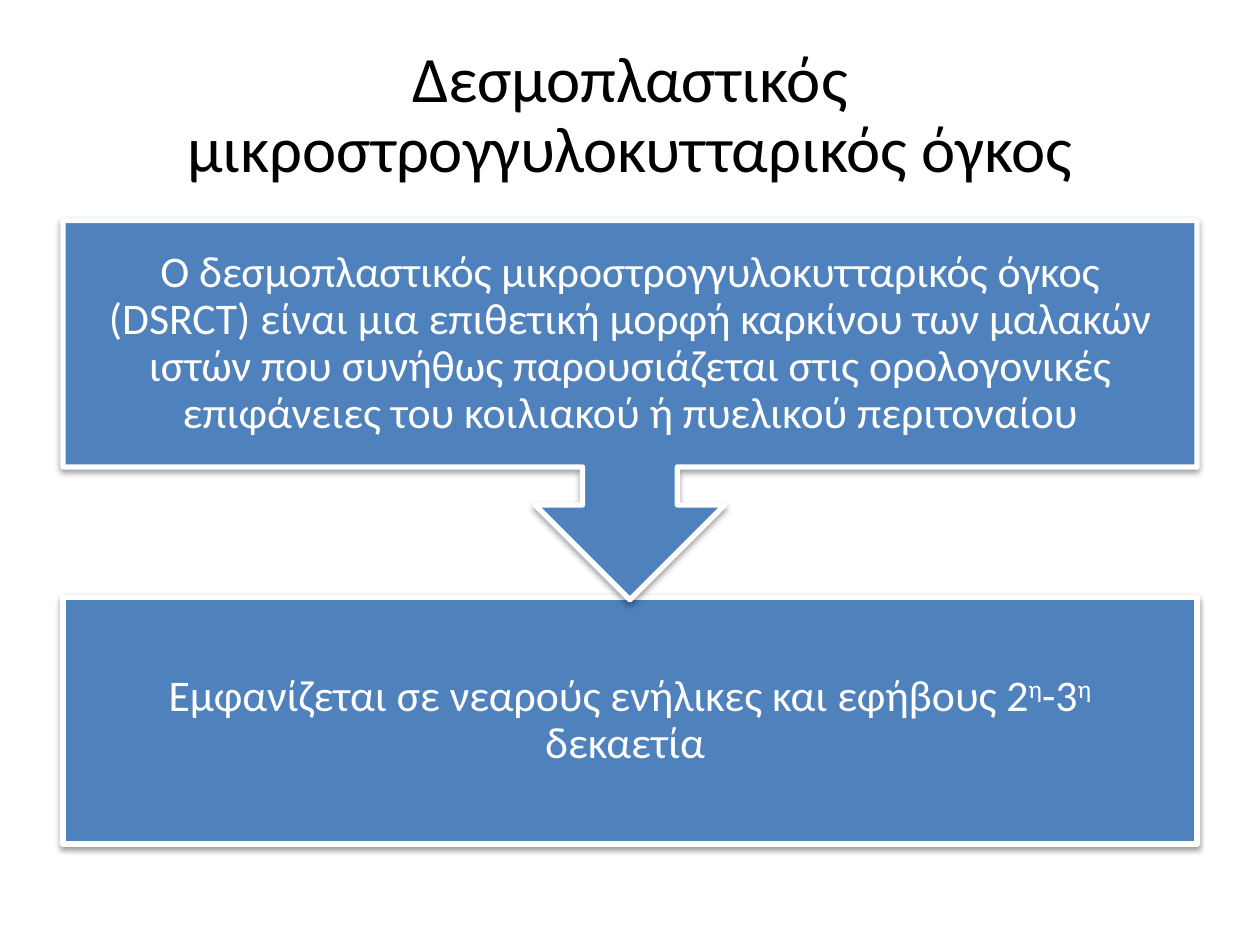
from dataclasses import dataclass

import pptx
import pptx.dml.color
import pptx.enum.shapes
import pptx.enum.text
import pptx.oxml
import pptx.oxml.ns
import pptx.util
from pptx.util import Inches

SHAPES = pptx.enum.shapes.MSO_SHAPE
FONT = "Calibri"
BLUE, WHITE, BLACK = "4F81BD", "FFFFFF", "000000"
LEFT, WIDTH = 0.5, 9


@dataclass
class Step:
    """One stage of the downward process; spans are (text, is superscript)."""
    kind: SHAPES
    top: float
    height: float
    spans: list[tuple[str, bool]]


STEPS = [
    Step(SHAPES.RECTANGLE, 4.74, 1.96, [
        ("Εμφανίζεται σε νεαρούς ενήλικες και εφήβους 2", False),
        ("η", True), ("-3", False), ("η", True), (" δεκαετία ", False),
    ]),
    Step(SHAPES.DOWN_ARROW_CALLOUT, 1.75, 3.01, [
        ("Ο δεσμοπλαστικός μικροστρογγυλοκυτταρικός όγκος (DSRCT) είναι μια "
         "επιθετική μορφή καρκίνου των μαλακών ιστών που συνήθως παρουσιάζεται "
         "στις ορολογονικές επιφάνειες του κοιλιακού ή πυελικού περιτοναίου", False),
    ]),
]


def color(value: str) -> pptx.dml.color.RGBColor:
    return pptx.dml.color.RGBColor.from_string(value)


def format_text(frame, size: float, hue: str) -> None:
    frame.word_wrap = True
    frame.auto_size = pptx.enum.text.MSO_AUTO_SIZE.NONE
    frame.vertical_anchor = pptx.enum.text.MSO_ANCHOR.MIDDLE
    para = frame.paragraphs[0]
    para.alignment = pptx.enum.text.PP_ALIGN.CENTER
    para.line_spacing = 0.9
    para.font.name = FONT
    para.font.size = pptx.util.Pt(size)
    para.font.color.rgb = color(hue)


def add_shadow(box) -> None:
    """Cast a soft black shadow straight down."""
    box.shadow.inherit = False
    effects = box._element.spPr.find(pptx.oxml.ns.qn("a:effectLst"))
    effects.append(pptx.oxml.parse_xml(
        f'<a:outerShdw {pptx.oxml.ns.nsdecls("a")} blurRad="{pptx.util.Pt(3.1)}" '
        f'dist="{pptx.util.Pt(1.6)}" dir="5400000" rotWithShape="0">'
        f'<a:srgbClr val="{BLACK}"><a:alpha val="38000"/></a:srgbClr></a:outerShdw>'))


def add_step(page, step: Step) -> None:
    box = page.shapes.add_shape(step.kind, Inches(LEFT), Inches(step.top),
                                Inches(WIDTH), Inches(step.height))
    box.fill.solid()
    box.fill.fore_color.rgb = color(BLUE)
    box.line.color.rgb = color(WHITE)
    box.line.width = pptx.util.Pt(3)
    add_shadow(box)

    frame = box.text_frame
    frame.margin_left = frame.margin_right = Inches(0.19)
    frame.margin_top = frame.margin_bottom = Inches(0.19)
    for text, superscript in step.spans:
        span = frame.paragraphs[0].add_run()
        span.text = text
        if superscript:
            span._r.get_or_add_rPr().set("baseline", "30000")
    format_text(frame, 25, WHITE)


def main() -> None:
    deck = pptx.Presentation()
    deck.slide_width, deck.slide_height = Inches(10), Inches(7.5)
    page = deck.slides.add_slide(deck.slide_layouts[5])

    # Title
    title = page.shapes.title
    title.left, title.top = Inches(LEFT), Inches(0.3)
    title.width, title.height = Inches(WIDTH), Inches(1.25)
    title.text_frame.text = "Δεσμοπλαστικός μικροστρογγυλοκυτταρικός όγκος"
    format_text(title.text_frame, 37, BLACK)

    # Process, the callout last so that its arrow lies over the lower box
    for step in STEPS:
        add_step(page, step)

    deck.save("out.pptx")


if __name__ == "__main__":
    main()
